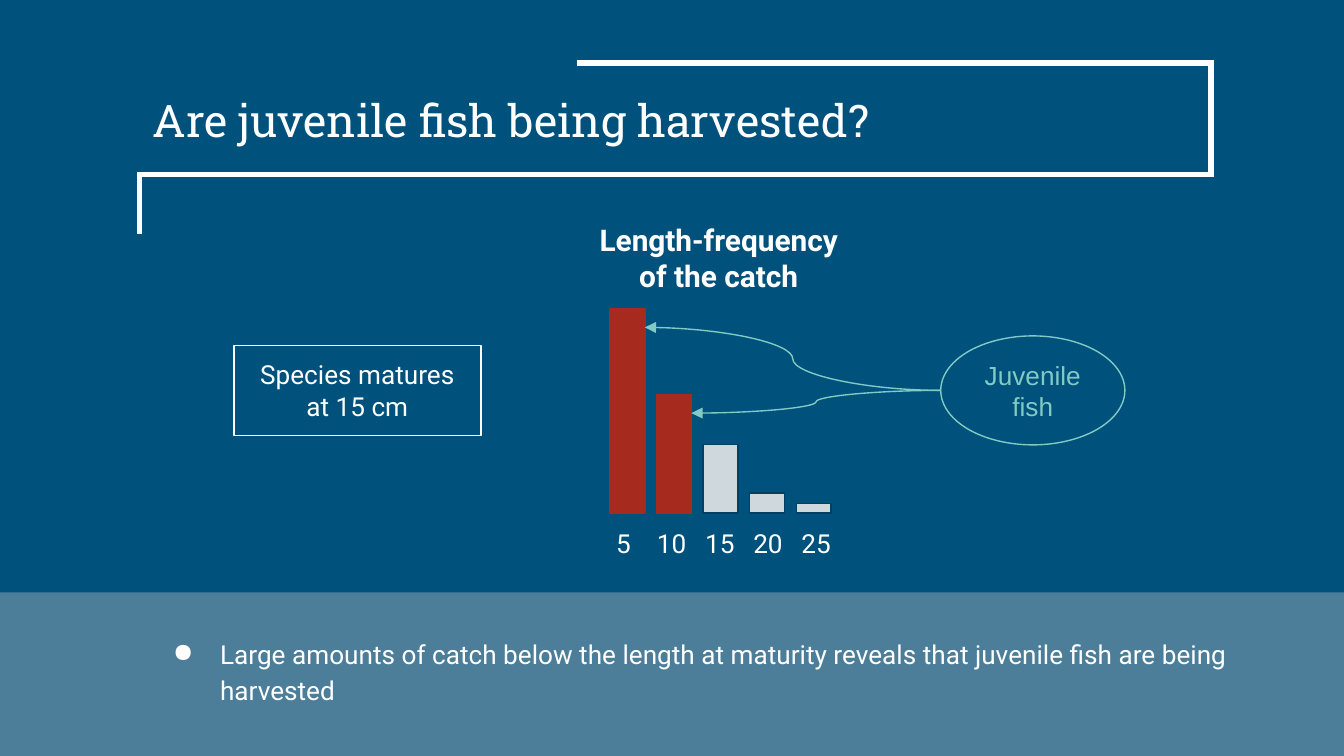
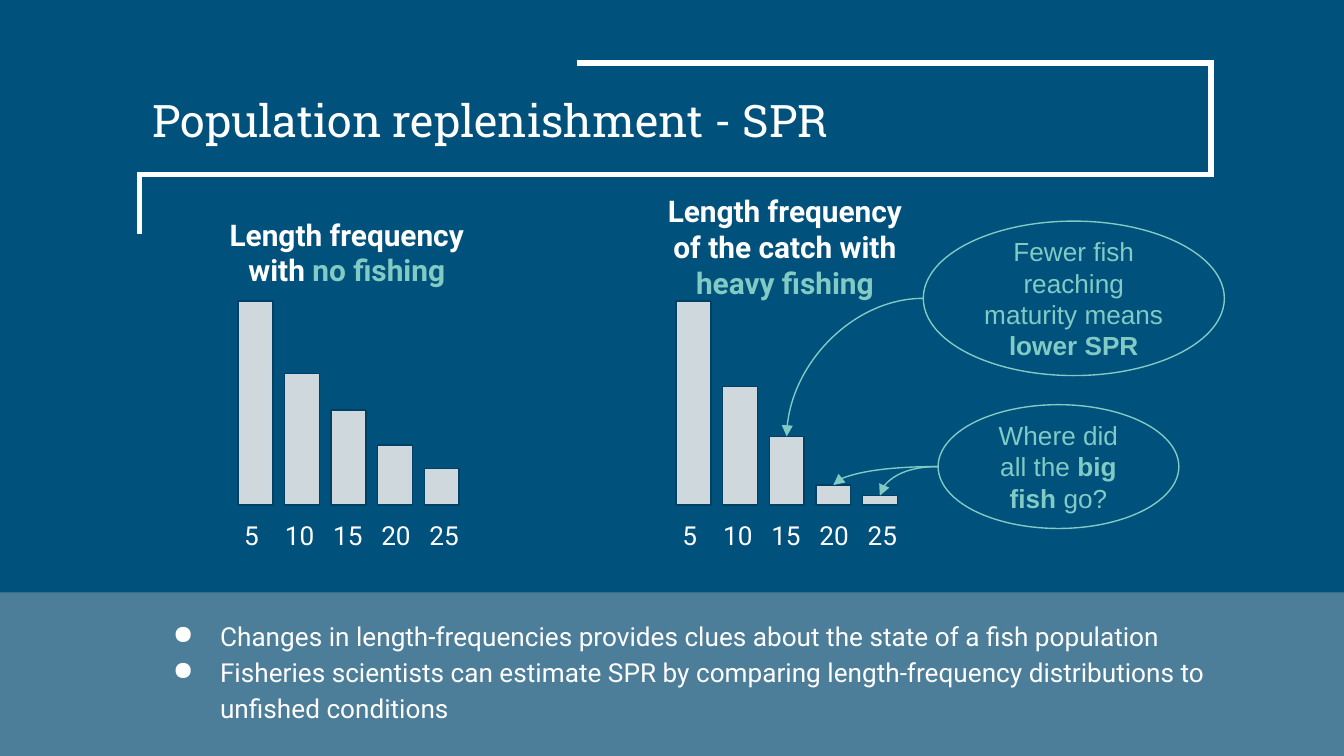
from lxml import etree
from pptx import Presentation
from pptx.dml.color import RGBColor
from pptx.enum import shapes, text
from pptx.oxml.ns import qn
from pptx.util import Cm, Pt

COLORS = {"bg": "00517C", "white": "FFFFFF", "band": "C9C9C9", "mint": "82CBC4",
          "red": "A72A1E", "grey": "CFD8DC", "navy": "004065"}
LENGTHS = ["5", "10", "15", "20", "25"]
FISHED = [3.86, 2.24, 1.3, 0.38, 0.18]
UNFISHED = [3.86, 2.49, 1.8, 1.14, 0.69]


def rgb(name):
    """Return the palette colour as an RGBColor."""
    return RGBColor.from_string(COLORS[name])


def cm(box):
    """Convert centimetre numbers to lengths."""
    return [Cm(v) for v in box]


def sub(parent, tag, **attrs):
    """Append an XML child with attributes."""
    return etree.SubElement(parent, qn(tag), attrs)


def write(tf, *paras, size=14, font="Roboto", color="white", bold=False,
          align="CENTER", anchor="TOP"):
    """Fill a text frame; a paragraph is a string or a list of (text, overrides)."""
    tf.word_wrap = True
    tf.auto_size = text.MSO_AUTO_SIZE.NONE
    tf.vertical_anchor = text.MSO_ANCHOR[anchor]
    tf.margin_left = tf.margin_right = tf.margin_top = tf.margin_bottom = Cm(0.25)
    for i, para in enumerate(paras):
        p = tf.paragraphs[0] if i == 0 else tf.add_paragraph()
        p.alignment = text.PP_ALIGN[align]
        for words, changes in [(para, {})] if isinstance(para, str) else para:
            r = p.add_run()
            r.text = words
            r.font.name, r.font.size = font, Pt(size)
            r.font.bold = changes.get("bold", bold)
            r.font.color.rgb = rgb(changes.get("color", color))


def add_text(parent, box, *paras, **fmt):
    """Add a text box and return it."""
    sp = parent.add_textbox(*cm(box))
    write(sp.text_frame, *paras, **fmt)
    return sp


def style(sp, fill=None, line=None, width=0.75):
    """Set fill and outline and drop the shadow."""
    sp.shadow.inherit = False
    if fill:
        sp.fill.solid()
        sp.fill.fore_color.rgb = rgb(fill)
    else:
        sp.fill.background()
    if line:
        sp.line.color.rgb = rgb(line)
        sp.line.width = Pt(width)
    else:
        sp.line.fill.background()


def add_shape(parent, kind, box, **look):
    """Add a styled preset shape."""
    sp = parent.add_shape(shapes.MSO_SHAPE[kind], *cm(box))
    style(sp, **look)
    return sp


def add_title_frame(slide):
    """Draw the open title frame and place it in the layout."""
    pts = [cm(p) for p in [(10.9, 1.19), (22.89, 1.19), (22.89, 3.3), (2.64, 3.3), (2.64, 4.42)]]
    fb = slide.shapes.build_freeform(*pts[0])
    fb.add_line_segments(pts[1:], close=False)
    sp = fb.convert_to_shape()
    style(sp, line="white", width=3)
    sub(sp.element.spPr.find(qn("a:ln")), "a:miter", lim="800000")
    slide.slide_layout.shapes.element.append(sp.element)


def add_title(slide, words, box=(2.64, 1.5, 20.17, 2.34)):
    """Place and format the title placeholder."""
    sp = slide.shapes.title
    sp.left, sp.top, sp.width, sp.height = cm(box)
    write(sp.text_frame, words, size=24, font="Roboto Slab", align="LEFT")


def add_takeaways(slide, *points, box=(0, 11.2, 25.4, 3.09)):
    """Draw the translucent bottom band with its bullets."""
    x, y, w, h = box
    band = add_shape(slide.shapes, "RECTANGLE", box, fill="band")
    sub(band.element.spPr.find(qn("a:solidFill"))[0], "a:alpha", val="38000")
    sp = add_text(slide.shapes, (x + 2.64, y, w - 4.01, h - 0.17), *points,
                  align="LEFT", anchor="MIDDLE")
    for p in sp.text_frame.paragraphs:
        p.line_spacing = 1.15
        pPr = p._p.get_or_add_pPr()
        pPr.set("marL", str(Cm(1.27)))
        pPr.set("indent", str(-Cm(0.89)))
        sub(sub(pPr, "a:buClr"), "a:srgbClr", val=COLORS["white"])
        sub(pPr, "a:buChar", char="●")


def add_histogram(slide, box, heading, heights, juveniles=0):
    """Draw heading, bars and length labels; the box ends at the baseline."""
    x, y, w, h = box
    base = y + h
    group = slide.shapes.add_group_shape().shapes
    bars = []
    for i, (label, height) in enumerate(zip(LENGTHS, heights)):
        look = {"fill": "red", "line": "red"} if i < juveniles else {"fill": "grey", "line": "navy"}
        bars.append(add_shape(group, "RECTANGLE",
                              (x + 0.56 + 0.88 * i, base - height, 0.66, height), **look))
        add_text(group, (x + 0.13 + 0.91 * i, base + 0.02, 1.37, 1.12), label)
    add_text(slide.shapes, (x, y, w, 1.88), heading, size=16, bold=True)
    return bars


def add_bubble(slide, box, words):
    """Draw an outlined ellipse with a comment."""
    sp = add_shape(slide.shapes, "OVAL", box, line="mint")
    write(sp.text_frame, words, font="Arial", color="mint", anchor="MIDDLE")
    return sp


def add_arrow(slide, bubble, x, y, bend="curvedConnector2"):
    """Draw a curved arrow from the left of a bubble to a point."""
    c = slide.shapes.add_connector(shapes.MSO_CONNECTOR.CURVE, bubble.left,
                                   bubble.top + bubble.height // 2, x, y)
    c.line.color.rgb = rgb("mint")
    c.line.width = Pt(0.75)
    spPr = c.element.spPr
    spPr.find(qn("a:prstGeom")).set("prst", bend)
    sub(spPr.find(qn("a:ln")), "a:tailEnd", type="triangle")
    sub(spPr, "a:effectLst")


def juvenile_slide(slide):
    """Build the slide on juvenile harvest."""
    add_title(slide, "Are juvenile fish being harvested?")
    add_takeaways(slide, "Large amounts of catch below the length at maturity reveals "
                         "that juvenile fish are being harvested")
    note = add_shape(slide.shapes, "RECTANGLE", (4.42, 6.53, 4.67, 1.7), line="white")
    write(note.text_frame, "Species matures at 15 cm")
    bars = add_histogram(slide, (10.97, 3.94, 5.23, 5.76), "Length-frequency of the catch",
                         FISHED, juveniles=2)
    bubble = add_bubble(slide, (17.78, 6.35, 3.48, 2.06), "Juvenile fish")
    for bar in bars[:2]:
        add_arrow(slide, bubble, bar.left + bar.width, bar.top + Cm(0.35), "curvedConnector3")


def replenishment_slide(slide):
    """Build the slide on population replenishment."""
    add_title(slide, "Population replenishment - SPR")
    add_takeaways(slide,
                  "Changes in length-frequencies provides clues about the state of a fish population",
                  "Fisheries scientists can estimate SPR by comparing length-frequency "
                  "distributions to unfished conditions")
    add_histogram(slide, (3.94, 3.84, 5.23, 5.71),
                  [("Length frequency with ", {}), ("no fishing", {"color": "mint"})], UNFISHED)
    bars = add_histogram(slide, (12.22, 3.4, 5.23, 6.15),
                         [("Length frequency of the catch with ", {}),
                          ("heavy fishing", {"color": "mint"})], FISHED)
    mature = add_bubble(slide, (17.45, 4.18, 5.69, 2.92),
                        [("Fewer fish reaching maturity means ", {}), ("lower SPR", {"bold": True})])
    big = add_bubble(slide, (17.73, 7.65, 4.55, 2.34),
                     [("Where did all the ", {}), ("big fish ", {"bold": True}), ("go?", {})])
    for bubble, bar in zip((mature, big, big), bars[2:]):
        add_arrow(slide, bubble, bar.left + bar.width // 2, bar.top)


def main():
    """Build and save the presentation."""
    prs = Presentation()
    prs.slide_width, prs.slide_height = Cm(25.4), Cm(14.29)
    layout = prs.slide_layouts[5]
    layout.background.fill.solid()
    layout.background.fill.fore_color.rgb = rgb("bg")
    first, second = [prs.slides.add_slide(layout) for _ in range(2)]
    add_title_frame(first)
    juvenile_slide(first)
    replenishment_slide(second)
    prs.save("out.pptx")


if __name__ == "__main__":
    main()
